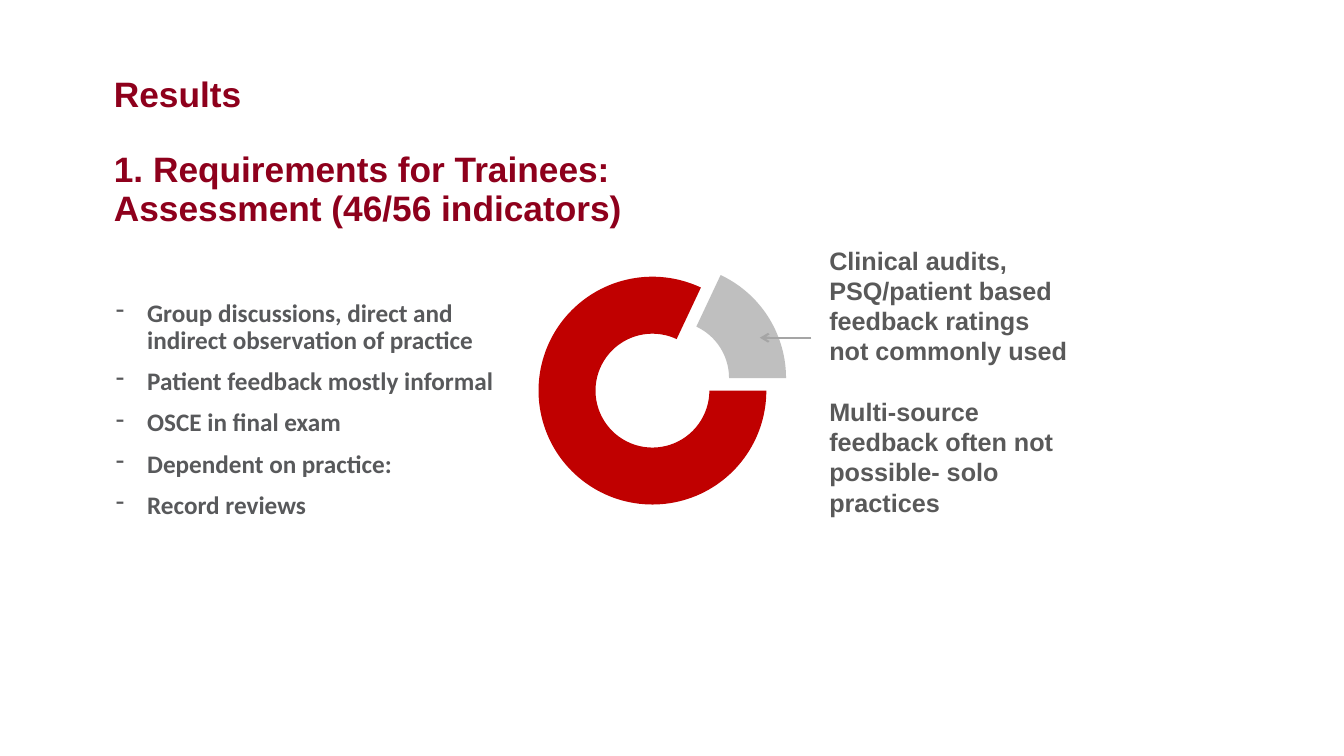
from lxml import etree
from pptx import Presentation
from pptx.chart import data
from pptx.dml.color import RGBColor
from pptx.enum import chart as charts, shapes, text
from pptx.oxml import ns
from pptx.util import Cm, Pt

MAROON = RGBColor(0x8E, 0x00, 0x1C)
SLATE = RGBColor(0x58, 0x59, 0x5B)
GRAY = RGBColor(0x59, 0x59, 0x59)
RED = RGBColor(0xC0, 0x00, 0x00)
SILVER = RGBColor(0xBF, 0xBF, 0xBF)
ARROW_GRAY = RGBColor(0xA5, 0xA5, 0xA5)
BLACK = RGBColor(0, 0, 0)

TITLE = ["Results", "1. Requirements for Trainees:", "Assessment (46/56 indicators)"]
METHODS = [
    "Group discussions, direct and indirect observation of practice",
    "Patient feedback mostly informal",
    "OSCE in final exam",
    "Dependent on practice:",
    "Record reviews",
]
GAPS = [
    "Clinical audits, PSQ/patient based feedback ratings not commonly used",
    "Multi-source feedback often not possible- solo practices",
]
SHARES = [("1", 82, RED), ("2", 18, SILVER)]

TITLE_BOX = (2.87, 1.93, 29.21, 2.87)
METHODS_BOX = (2.92, 7.57, 9.73, 6)
CHART_BOX = (10.59, 5.72, 12.7, 7.62)
GAPS_BOX = (20.65, 6.05, 6.6, 7.95)
ARROW_Y, ARROW_START, ARROW_END = 8.51, 20.45, 19.15
HANGING = Cm(0.79)


def write(frame, lines, font, size, color, gaps, spacing=1.0, margins=None, bullet=None):
    frame.word_wrap = True
    frame.auto_size = text.MSO_AUTO_SIZE.NONE
    frame.vertical_anchor = text.MSO_ANCHOR.TOP
    if margins is not None:
        frame.margin_left = frame.margin_right = margins
        frame.margin_top = frame.margin_bottom = margins
    for index, (line, gap) in enumerate(zip(lines, gaps)):
        paragraph = frame.paragraphs[0] if index == 0 else frame.add_paragraph()
        paragraph.alignment = text.PP_ALIGN.LEFT
        paragraph.line_spacing = spacing
        paragraph.space_before = Pt(gap)
        if bullet:
            properties = paragraph._p.get_or_add_pPr()
            properties.set("marL", str(HANGING))
            properties.set("indent", str(-HANGING))
            etree.SubElement(properties, ns.qn("a:buChar")).set("char", bullet)
        run = paragraph.add_run()
        run.text = line
        run.font.name = font
        run.font.size = Pt(size)
        run.font.bold = True
        run.font.color.rgb = color


def add_doughnut(slide):
    chart_data = data.CategoryChartData()
    chart_data.categories = [name for name, _, _ in SHARES]
    chart_data.add_series("Series 1", [value for _, value, _ in SHARES])
    chart = slide.shapes.add_chart(
        charts.XL_CHART_TYPE.DOUGHNUT, *map(Cm, CHART_BOX), chart_data).chart
    chart.has_legend = False
    chart.has_title = False
    chart.font.name = "Calibri"
    chart.font.size = Pt(10)
    chart.font.color.rgb = BLACK
    plot = chart.plots[0]
    plot.vary_by_categories = True
    series = plot.series[0]
    for index, (_, _, color) in enumerate(SHARES):
        fill = series.points[index].format.fill
        fill.solid()
        fill.fore_color.rgb = color
    explosion = etree.Element(ns.qn("c:explosion"), val="41")
    chart._chartSpace.xpath(".//c:dPt/c:spPr")[0].addprevious(explosion)
    chart._chartSpace.xpath(".//c:firstSliceAng")[0].set("val", "90")


def add_arrow(slide):
    arrow = slide.shapes.add_connector(
        shapes.MSO_CONNECTOR.STRAIGHT,
        Cm(ARROW_START), Cm(ARROW_Y), Cm(ARROW_END), Cm(ARROW_Y))
    arrow.line.color.rgb = ARROW_GRAY
    arrow.line.width = Pt(1.5)
    etree.SubElement(arrow.line._get_or_add_ln(), ns.qn("a:tailEnd")).set("type", "arrow")
    etree.SubElement(arrow._element.spPr, ns.qn("a:effectLst"))


def main():
    presentation = Presentation()
    presentation.slide_width = Cm(33.87)
    presentation.slide_height = Cm(19.05)
    slide = presentation.slides.add_slide(presentation.slide_layouts[5])
    title = slide.shapes.title
    title.left, title.top, title.width, title.height = map(Cm, TITLE_BOX)
    write(title.text_frame, TITLE, "Arial", 25.2, MAROON, [0, 27, 0],
          spacing=0.9, margins=0)
    methods = slide.shapes.add_textbox(*map(Cm, METHODS_BOX))
    write(methods.text_frame, METHODS, "Calibri", 18, SLATE, [0] + [10] * 4,
          spacing=0.9, margins=0, bullet="-")
    add_doughnut(slide)
    gaps = slide.shapes.add_textbox(*map(Cm, GAPS_BOX))
    write(gaps.text_frame, GAPS, "Arial", 18, GRAY, [0, 21.6])
    add_arrow(slide)
    presentation.save("out.pptx")


if __name__ == "__main__":
    main()
